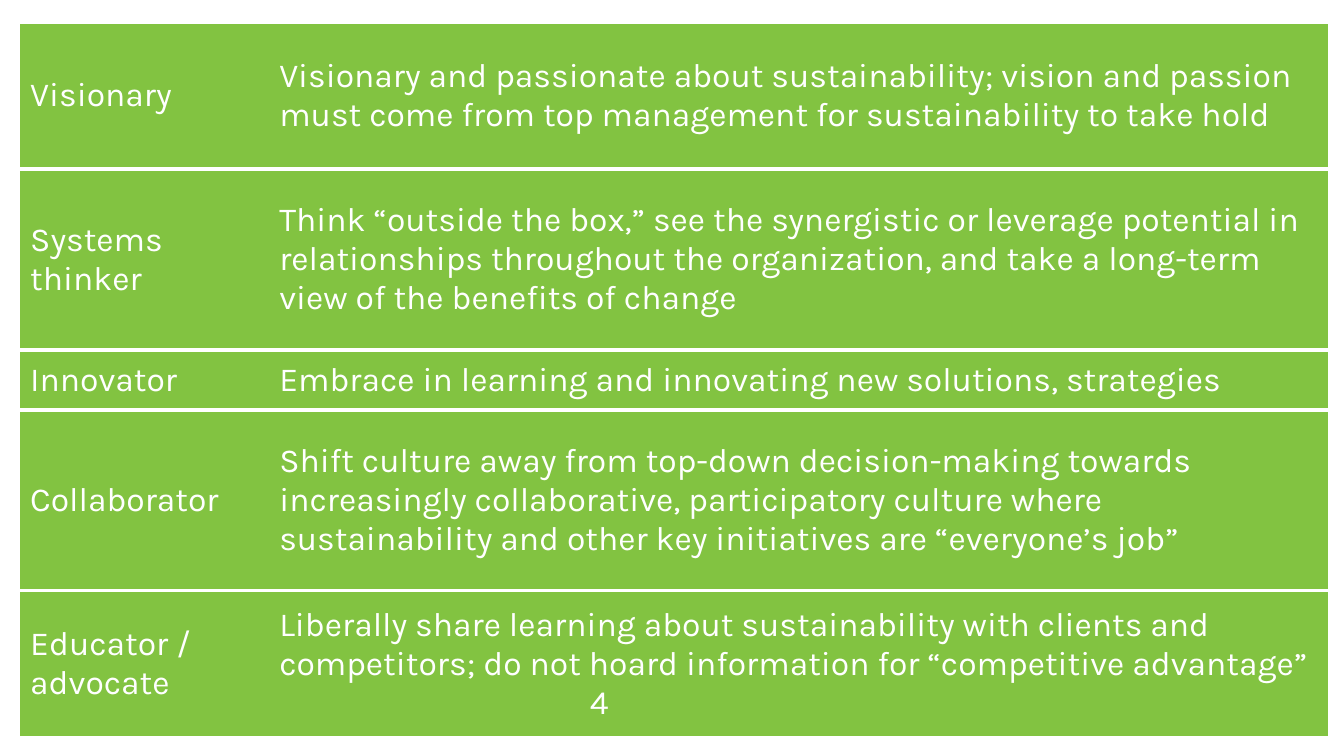
from lxml import etree
from pptx import Presentation
from pptx.dml import color
from pptx.enum import text
from pptx.oxml import ns
from pptx.util import Inches, Pt

GREEN = "82C341"
WHITE = "FFFFFF"
COLUMN_WIDTHS = [2.47, 10.5]
ROLES = [
    (1.46, "Visionary", "Visionary and passionate about sustainability; vision and passion must come from top management for sustainability to take hold"),
    (1.79, "Systems thinker", "Think “outside the box,” see the synergistic or leverage potential in relationships throughout the organization, and take a long-term view of the benefits of change"),
    (0.6, "Innovator", "Embrace in learning and innovating new solutions, strategies"),
    (1.79, "Collaborator", "Shift culture away from top-down decision-making towards increasingly collaborative, participatory culture where sustainability and other key initiatives are “everyone’s job”"),
    (1.46, "Educator / advocate", "Liberally share learning about sustainability with clients and competitors; do not hoard information for “competitive advantage”"),
]


def rgb(value):
    return color.RGBColor.from_string(value)


def set_borders(cell):
    tcPr = cell._tc.get_or_add_tcPr()
    for side in ("L", "R"):
        ln = etree.SubElement(tcPr, ns.qn(f"a:ln{side}"), w="0")
        etree.SubElement(ln, ns.qn("a:noFill"))
    for side in ("T", "B"):
        ln = etree.SubElement(tcPr, ns.qn(f"a:ln{side}"), w=str(Pt(3)))
        fill = etree.SubElement(ln, ns.qn("a:solidFill"))
        etree.SubElement(fill, ns.qn("a:srgbClr"), val=WHITE)


def format_paragraph(p, before=3, after=3):
    p.space_before, p.space_after = Pt(before), Pt(after)
    for r in p.runs:
        r.font.name = "Karla"
        r.font.size = Pt(24)
        r.font.bold = False
        r.font.color.rgb = rgb(WHITE)


def fill_cell(cell, words):
    set_borders(cell)
    cell.fill.solid()
    cell.fill.fore_color.rgb = rgb(GREEN)
    cell.vertical_anchor = text.MSO_ANCHOR.MIDDLE
    cell.text_frame.text = words
    format_paragraph(cell.text_frame.paragraphs[0])


def add_page_number(cell, number):
    tf = cell.text_frame
    format_paragraph(tf.paragraphs[0], after=0)
    p = tf.add_paragraph()
    p.text = number
    format_paragraph(p, before=0)
    p._p.get_or_add_pPr().set("marL", str(Inches(3.08)))


def add_role_table(slide):
    height = sum(row[0] for row in ROLES)
    frame = slide.shapes.add_table(
        len(ROLES), len(COLUMN_WIDTHS), Inches(0.2), Inches(0.22),
        Inches(sum(COLUMN_WIDTHS)), Inches(height))
    table = frame.table
    table.first_row = False
    table.horz_banding = False
    for column, width in zip(table.columns, COLUMN_WIDTHS):
        column.width = Inches(width)
    for row, (row_height, *words) in zip(table.rows, ROLES):
        row.height = Inches(row_height)
        for cell, content in zip(row.cells, words):
            fill_cell(cell, content)
    return table


def main():
    prs = Presentation()
    prs.slide_width, prs.slide_height = Inches(13.33), Inches(7.5)
    slide = prs.slides.add_slide(prs.slide_layouts[6])
    table = add_role_table(slide)
    add_page_number(table.cell(len(ROLES) - 1, 1), "4")
    prs.save("out.pptx")


if __name__ == "__main__":
    main()
